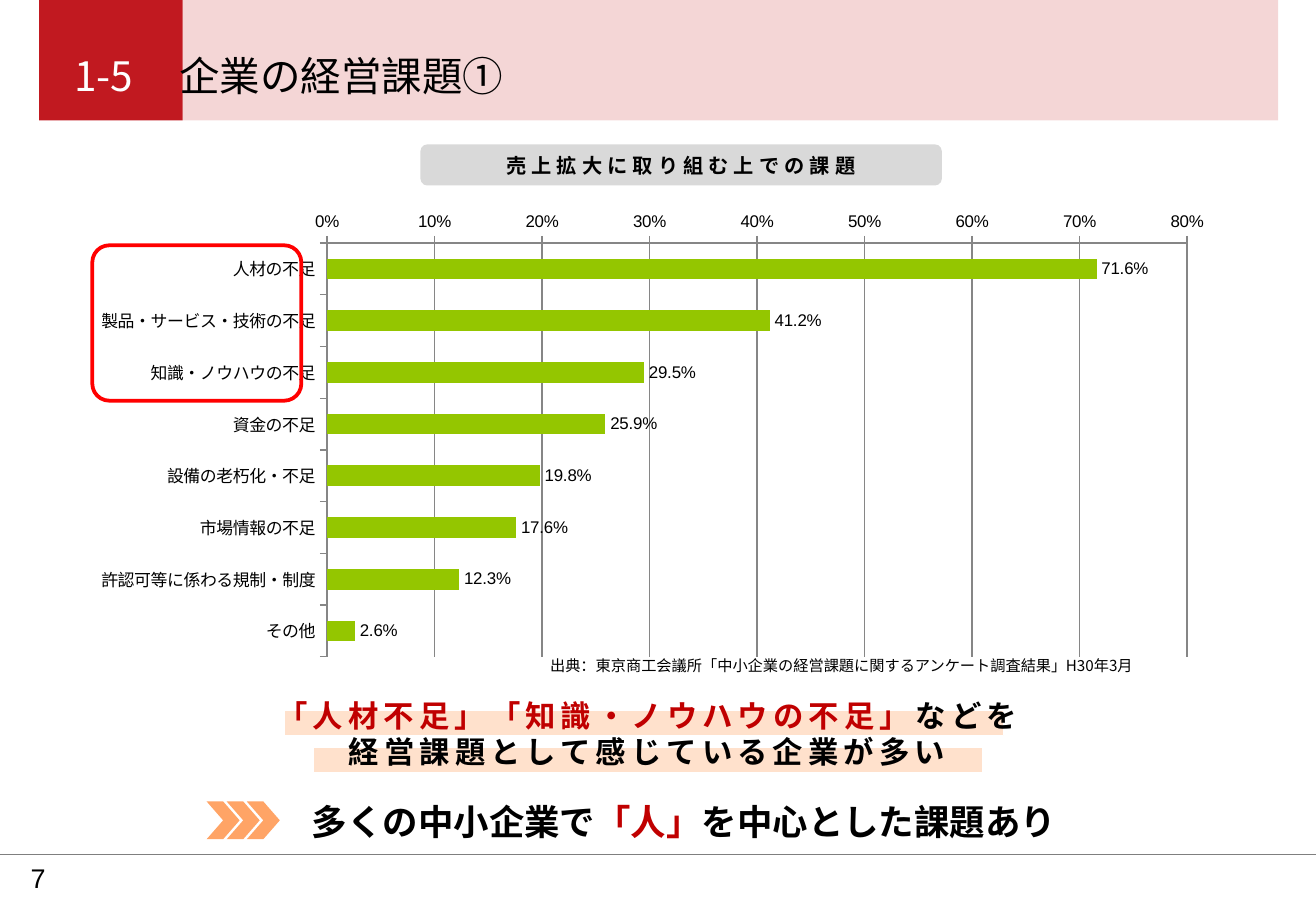
"""Build the slide on management issues of small and medium companies."""
from lxml import etree
from pptx import Presentation
from pptx.chart.data import CategoryChartData
from pptx.dml.color import RGBColor
from pptx.enum.chart import XL_CHART_TYPE, XL_LABEL_POSITION, XL_TICK_MARK
from pptx.enum.shapes import MSO_CONNECTOR, MSO_SHAPE
from pptx.enum.text import MSO_ANCHOR, PP_ALIGN
from pptx.oxml import parse_xml
from pptx.oxml.ns import nsdecls, qn
from pptx.util import Cm, Pt

RECT, ROUNDED, CHEVRON = MSO_SHAPE.RECTANGLE, MSO_SHAPE.ROUNDED_RECTANGLE, MSO_SHAPE.CHEVRON
LEFT, CENTER = PP_ALIGN.LEFT, PP_ALIGN.CENTER
MIDDLE = MSO_ANCHOR.MIDDLE
OUTSIDE = XL_TICK_MARK.OUTSIDE
OUTSIDE_END = XL_LABEL_POSITION.OUTSIDE_END
JAPANESE, LATIN = "Noto Sans CJK JP", "Arial"
BLACK, RED, GRAY = (RGBColor.from_string(c) for c in ("000000", "C00000", "868686"))
color = RGBColor.from_string

deck = Presentation()
deck.slide_width, deck.slide_height = Cm(27.51), Cm(19.05)
page = deck.slides.add_slide(deck.slide_layouts[6])


def add_block(kind, left, top, width, height, fill=None, line=None, line_width=0.75):
    """Add a flat preset shape with optional fill and outline."""
    block = page.shapes.add_shape(kind, Cm(left), Cm(top), Cm(width), Cm(height))
    block.shadow.inherit = False
    if fill:
        block.fill.solid()
        block.fill.fore_color.rgb = color(fill)
    else:
        block.fill.background()
    if line:
        block.line.color.rgb = color(line)
        block.line.width = Pt(line_width)
    else:
        block.line.fill.background()
    return block


def write(box, lines, size, align=LEFT, bold=False, spacing=0, font=JAPANESE):
    """Fill a box with lines made of (text, colour) spans."""
    frame = box.text_frame
    frame.word_wrap = True
    frame.vertical_anchor = MIDDLE
    for index, spans in enumerate(lines):
        para = frame.add_paragraph() if index else frame.paragraphs[0]
        para.alignment = align
        for text, rgb in spans:
            span = para.add_run()
            span.text = text
            span.font.size, span.font.bold, span.font.name = Pt(size), bold, font
            span.font.color.rgb = rgb
            properties = span.font._element
            etree.SubElement(properties, qn("a:ea")).set("typeface", font)
            if spacing:
                properties.set("spc", str(spacing * 100))
    return frame


footer_line = page.shapes.add_connector(MSO_CONNECTOR.STRAIGHT, 0, Cm(17.86), Cm(27.51), Cm(17.86))
footer_line.line.color.rgb = color("7F7F7F")
footer_line.line.width = Pt(0.25)
etree.SubElement(footer_line._element.spPr, qn("a:effectLst"))

add_block(RECT, 0.82, 0, 3, 2.52, "C11920")
banner = add_block(RECT, 3.82, 0, 22.9, 2.52, "C00000")
banner_color = banner._element.spPr.find(".//" + qn("a:srgbClr"))
etree.SubElement(banner_color, qn("a:alpha")).set("val", "16000")
add_block(RECT, 5.94, 14.86, 15.04, 0.53, "FFE1CC", "FFFFFF")
add_block(RECT, 6.55, 15.62, 14, 0.53, "FFE1CC", "FFFFFF")

issues = {
    "人材の不足": 0.716,
    "製品・サービス・技術の不足": 0.412,
    "知識・ノウハウの不足": 0.295,
    "資金の不足": 0.259,
    "設備の老朽化・不足": 0.198,
    "市場情報の不足": 0.176,
    "許認可等に係わる規制・制度": 0.123,
    "その他": 0.026,
}
data = CategoryChartData(number_format="0.0%")
data.categories = list(issues)
data.add_series("Series 1", list(issues.values()))
chart = page.shapes.add_chart(
    XL_CHART_TYPE.BAR_CLUSTERED, Cm(1.63), Cm(4.24), Cm(24), Cm(9.7), data).chart
chart.has_legend = chart.has_title = False
chart.font.size, chart.font.name = Pt(10), LATIN
chart.font.color.rgb = BLACK
for axis in (chart.category_axis, chart.value_axis):
    axis.major_tick_mark = OUTSIDE
    axis.format.line.color.rgb = GRAY
chart.category_axis.reverse_order = True
chart.category_axis.has_major_gridlines = False
values = chart.value_axis
values.minimum_scale, values.maximum_scale, values.major_unit = 0, 0.8, 0.1
values.tick_labels.number_format = "0%"
values.tick_labels.number_format_is_linked = False
values.has_major_gridlines = True
values.major_gridlines.format.line.color.rgb = GRAY

plot = chart.plots[0]
plot.gap_width = 150
plot.vary_by_categories = False
bars = plot.series[0]
bars.format.fill.solid()
bars.format.fill.fore_color.rgb = color("94C600")
plot.has_data_labels = True
labels = plot.data_labels
labels.show_value = True
labels.number_format = "0.0%"
labels.number_format_is_linked = False
labels.position = OUTSIDE_END

plot_area = chart._chartSpace.chart.plotArea
for old_layout in plot_area.findall(qn("c:layout")):
    plot_area.remove(old_layout)
plot_area.insert(0, parse_xml(
    f'<c:layout {nsdecls("c")}><c:manualLayout><c:layoutTarget val="inner"/>'
    '<c:xMode val="edge"/><c:yMode val="edge"/><c:x val="0.217"/><c:y val="0.087"/>'
    '<c:w val="0.749"/><c:h val="0.892"/></c:manualLayout></c:layout>'))

title = page.shapes.add_textbox(Cm(1.37), Cm(0.76), Cm(25.7), Cm(1.8))
frame = write(title, [[("1-5\t", color("FFFFFF")), ("企業の経営課題①", BLACK)]], 24)
frame.margin_left, frame.margin_right = Cm(0.18), 0
frame.margin_top, frame.margin_bottom = 0, Cm(0.15)
tabs = etree.SubElement(frame.paragraphs[0]._p.get_or_add_pPr(), qn("a:tabLst"))
etree.SubElement(tabs, qn("a:tab"), pos=str(Cm(2.2)), algn="l")

number = page.shapes.add_textbox(Cm(0.64), Cm(17.86), Cm(1.02), Cm(0.99))
frame = write(number, [[("7", BLACK)]], 16, font=LATIN)
frame.margin_left = frame.margin_right = 0

message = page.shapes.add_textbox(Cm(4.45), Cm(14.45), Cm(18.16), Cm(1.8))
frame = write(message, [
    [("「人材不足」「知識・ノウハウの不足」", RED), ("などを", BLACK)],
    [("経営課題として感じている企業が多い", BLACK)],
], 18, CENTER, True, 3)
for para in frame.paragraphs:
    para.line_spacing = Pt(21.3)

citation = page.shapes.add_textbox(Cm(11.25), Cm(13.59), Cm(13.28), Cm(0.64))
write(citation, [[("出典：東京商工会議所「中小企業の経営課題に関するアンケート調査結果」H30年3月", BLACK)]], 9)

conclusion = page.shapes.add_textbox(Cm(6.27), Cm(16.18), Cm(17.96), Cm(1.98))
write(conclusion, [[("多くの中小企業で", BLACK), ("「人」", RED), ("を中心とした課題あり", BLACK)]],
      21, bold=True)

heading = add_block(ROUNDED, 8.79, 3.02, 10.9, 0.86, "D9D9D9")
write(heading, [[("売上拡大に取り組む上での課題", BLACK)]], 12, CENTER, True, 3)

highlight = add_block(ROUNDED, 1.93, 5.13, 4.37, 3.25, line="FF0000", line_width=2.25)
highlight.adjustments[0] = 0.11
for step in range(3):
    add_block(CHEVRON, 4.32 + 0.42 * step, 16.76, 0.69, 0.79, "FFA466")

deck.save("out.pptx")
